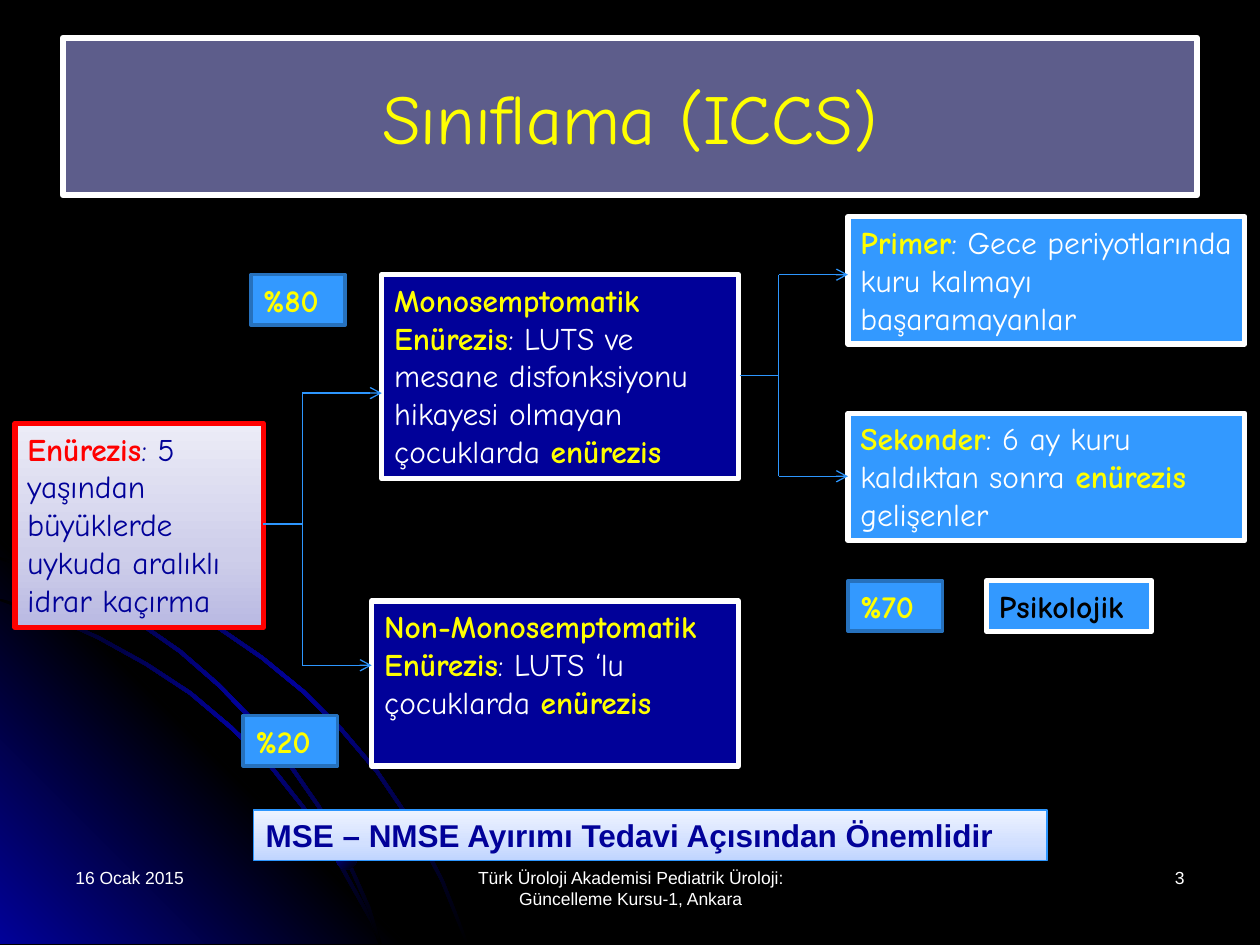
from dataclasses import dataclass

from lxml import etree
from pptx import Presentation
from pptx.dml.color import RGBColor
from pptx.enum.shapes import MSO_CONNECTOR, MSO_SHAPE
from pptx.enum.text import MSO_ANCHOR, MSO_AUTO_SIZE, PP_ALIGN
from pptx.oxml.ns import qn
from pptx.util import Inches, Pt

RECTANGLE, OVAL = MSO_SHAPE.RECTANGLE, MSO_SHAPE.OVAL
STRAIGHT = MSO_CONNECTOR.STRAIGHT
TOP, MIDDLE = MSO_ANCHOR.TOP, MSO_ANCHOR.MIDDLE
LEFT, CENTER, RIGHT = PP_ALIGN.LEFT, PP_ALIGN.CENTER, PP_ALIGN.RIGHT
NO_AUTOFIT = MSO_AUTO_SIZE.NONE

WIDTH, HEIGHT = 10, 7.5


@dataclass(frozen=True)
class Theme:
    black: str = "000000"
    white: str = "FFFFFF"
    yellow: str = "FFFF00"
    red: str = "FF0000"
    navy: str = "010199"
    sky: str = "3399FF"
    sky_edge: str = "2671BD"
    connector: str = "2D96FE"
    title_fill: str = "5D5D8B"
    lavender: tuple = ((0, "B9B9E2"), (35, "CECEEA"), (100, "ECECF7"))
    pale_blue: tuple = ((0, "BFD4FF"), (35, "D2E0FF"), (100, "EEF3FF"))
    streak: tuple = ((0, "000000"), (50, "010199"), (100, "000000"))
    glow: tuple = ((0, "010199"), (50, "000000"), (100, "010199"))
    dot: tuple = ((0, "010199"), (100, "000000"))
    hand_font: str = "Comic Neue"
    plain_font: str = "Arial"
    title_size: int = 40
    body_size: int = 18
    footer_size: int = 10


THEME = Theme()


def write_text(paragraph, text, *, color, size=THEME.body_size, font=THEME.hand_font, bold=False):
    run = paragraph.add_run()
    run.text = text
    run.font.name = font
    run.font.size = Pt(size)
    run.font.bold = bold
    run.font.color.rgb = RGBColor.from_string(color)


def fill_gradient(shape, stops, angle):
    """Fill with (percent, colour) stops; the angle runs clockwise."""
    shape.fill.background()
    old_fill = shape._element.spPr.find(qn("a:noFill"))
    gradient = etree.Element(qn("a:gradFill"), rotWithShape="1")
    stop_list = etree.SubElement(gradient, qn("a:gsLst"))
    for percent, color in stops:
        stop = etree.SubElement(stop_list, qn("a:gs"), pos=str(percent * 1000))
        etree.SubElement(stop, qn("a:srgbClr"), val=color)
    etree.SubElement(gradient, qn("a:lin"), ang=str(angle * 60000), scaled="0")
    old_fill.getparent().replace(old_fill, gradient)


class SlideBuilder:
    def __init__(self, slide, theme):
        self.slide = slide
        self.shapes = slide.shapes
        self.theme = theme
        slide.background.fill.solid()
        slide.background.fill.fore_color.rgb = RGBColor.from_string(theme.black)

    def paint(self, shape, fill, edge=None, edge_width=3, angle=270):
        """Apply a plain colour or a tuple of gradient stops, and an optional edge."""
        if isinstance(fill, tuple):
            fill_gradient(shape, fill, angle)
        else:
            shape.fill.solid()
            shape.fill.fore_color.rgb = RGBColor.from_string(fill)
        if edge:
            shape.line.color.rgb = RGBColor.from_string(edge)
            shape.line.width = Pt(edge_width)
        else:
            shape.line.fill.background()

    def set_frame(self, shape, anchor=TOP, align=LEFT):
        frame = shape.text_frame
        frame.word_wrap = True
        frame.auto_size = NO_AUTOFIT
        frame.vertical_anchor = anchor
        frame.paragraphs[0].alignment = align
        return frame.paragraphs[0]

    def title(self, text, left, top, width, height):
        title = self.shapes.title
        title.left, title.top = Inches(left), Inches(top)
        title.width, title.height = Inches(width), Inches(height)
        self.paint(title, self.theme.title_fill, self.theme.white, 3.5)
        write_text(self.set_frame(title, MIDDLE, CENTER), text,
                   color=self.theme.yellow, size=self.theme.title_size)

    def preset(self, kind, place, fill, **look):
        shape = self.shapes.add_shape(kind, *map(Inches, place))
        shape.shadow.inherit = False
        self.paint(shape, fill, **look)
        return shape

    def outline(self, points, fill, angle):
        (start_x, start_y), *others = [(Inches(x), Inches(y)) for x, y in points]
        builder = self.shapes.build_freeform(start_x, start_y)
        builder.add_line_segments(others)
        shape = builder.convert_to_shape()
        shape.shadow.inherit = False
        self.paint(shape, fill, angle=angle)

    def streak(self, points, thickness=0.02):
        """Draw a thin curved band below the given edge, kept on the slide."""
        inner = [(max(0, x - thickness), min(HEIGHT, y + thickness)) for x, y in reversed(points)]
        self.outline(points + inner, self.theme.streak, 45)

    def box(self, place, runs, fill, edge=THEME.white, edge_width=3, font=THEME.hand_font):
        """Draw a box; runs are (text, colour, bold)."""
        shape = self.preset(RECTANGLE, place, fill, edge=edge, edge_width=edge_width)
        paragraph = self.set_frame(shape)
        for text, color, bold in runs:
            write_text(paragraph, text, color=color, bold=bold, font=font)

    def percentage(self, left, top, text):
        self.box((left, top, 0.75, 0.4), [(text, self.theme.yellow, True)],
                 self.theme.sky, self.theme.sky_edge, 2)

    def line(self, start, end, arrow=False):
        connector = self.shapes.add_connector(STRAIGHT, *map(Inches, start + end))
        connector.line.color.rgb = RGBColor.from_string(self.theme.connector)
        connector.line.width = Pt(0.75)
        if arrow:
            etree.SubElement(connector.line._get_or_add_ln(), qn("a:tailEnd"), type="arrow")
        etree.SubElement(connector._element.spPr, qn("a:effectLst"))

    def branch(self, start, trunk_x, ends):
        """Link a start point to several ends through a vertical trunk."""
        heights = [y for _, y in ends]
        self.line(start, (trunk_x, start[1]))
        self.line((trunk_x, min(heights)), (trunk_x, max(heights)))
        for end in ends:
            self.line((trunk_x, end[1]), end, arrow=True)

    def footer(self, text, left, width, align):
        place = map(Inches, (left, 6.83, width, 0.5))
        paragraph = self.set_frame(self.shapes.add_textbox(*place), align=align)
        write_text(paragraph, text, color=self.theme.white,
                   size=self.theme.footer_size, font=self.theme.plain_font)


def draw_backdrop(builder):
    theme = builder.theme
    builder.streak([(0, 4.35), (0.57, 4.47), (0.98, 4.59), (1.36, 4.77), (1.74, 4.97),
                    (2.09, 5.21), (2.42, 5.48), (2.72, 5.78), (3, 6.11), (3.25, 6.48),
                    (3.39, 6.73), (3.52, 6.98), (3.62, 7.23), (3.72, 7.49)])
    builder.outline([(0, 4.27), (3.22, 7.49), (0, 7.49)], theme.glow, 315)
    builder.streak([(0, 4.75), (0.41, 4.88), (0.79, 5.05), (1.17, 5.26), (1.52, 5.49),
                    (1.84, 5.76), (2.15, 6.06), (2.42, 6.4), (2.66, 6.76), (2.86, 7.12),
                    (2.96, 7.3), (3.03, 7.49)])
    builder.streak([(0, 4.42), (0.39, 4.55), (0.76, 4.73), (1.11, 4.93), (1.44, 5.16),
                    (1.75, 5.43), (2.04, 5.73), (2.29, 6.03), (2.54, 6.39), (2.69, 6.65),
                    (2.82, 6.93), (2.94, 7.2), (3.03, 7.49)])
    for left, top, size, angle in [(0.36, 4.83, 0.15, 315), (2.67, 6.74, 0.16, 45),
                                   (1.37, 4.73, 0.21, 315)]:
        builder.preset(OVAL, (left, top, size, size), theme.dot, angle=angle)


def draw_classification(builder):
    theme = builder.theme
    navy, sky, white, yellow = theme.navy, theme.sky, theme.white, theme.yellow
    enuresis = ("enürezis", yellow, True)
    builder.box((0.12, 3.36, 1.97, 1.62),
                [("Enürezis", theme.red, True),
                 (": 5 yaşından büyüklerde uykuda aralıklı idrar kaçırma", navy, False)],
                theme.lavender, theme.red)
    builder.box((3.03, 2.18, 2.83, 1.62),
                [("Monosemptomatik Enürezis", yellow, True),
                 (": LUTS ve mesane disfonksiyonu hikayesi olmayan çocuklarda ", white, False),
                 enuresis], navy)
    builder.box((2.95, 4.77, 2.91, 1.31),
                [("Non-Monosemptomatik Enürezis", yellow, True),
                 (": LUTS ‘lu çocuklarda ", white, False), enuresis], navy)
    builder.box((6.73, 1.72, 3.15, 1.01),
                [("Primer", yellow, True),
                 (": Gece periyotlarında kuru kalmayı başaramayanlar", white, False)], sky)
    builder.box((6.73, 3.28, 3.15, 1.01),
                [("Sekonder", yellow, True), (": 6 ay kuru kaldıktan sonra ", white, False),
                 enuresis, (" gelişenler", white, False)], sky)
    builder.branch((5.87, 2.98), 6.18, [(6.73, 2.18), (6.73, 3.78)])
    builder.branch((2.09, 4.16), 2.4, [(3.03, 3.12), (2.95, 5.28)])
    builder.box((2.01, 6.43, 6.3, 0.4),
                [("MSE – NMSE Ayırımı Tedavi Açısından Önemlidir", navy, True)],
                theme.pale_blue, theme.connector, 0.75, theme.plain_font)
    for left, top, text in [(1.99, 2.18, "%80"), (1.93, 5.68, "%20"), (6.73, 4.61, "%70")]:
        builder.percentage(left, top, text)
    builder.box((7.83, 4.61, 1.31, 0.4), [("Psikolojik", theme.black, True)], sky)


def main():
    presentation = Presentation()
    presentation.slide_width, presentation.slide_height = Inches(WIDTH), Inches(HEIGHT)
    title_only = presentation.slide_layouts[5]
    builder = SlideBuilder(presentation.slides.add_slide(title_only), THEME)
    draw_backdrop(builder)
    builder.title("Sınıflama (ICCS)", 0.5, 0.3, 9, 1.25)
    draw_classification(builder)
    builder.footer("16 Ocak 2015", 0.5, 2.33, LEFT)
    builder.footer("3", 7.17, 2.33, RIGHT)
    builder.footer("Türk Üroloji Akademisi Pediatrik Üroloji: Güncelleme Kursu-1, Ankara",
                   3.42, 3.17, CENTER)
    presentation.save("out.pptx")


if __name__ == "__main__":
    main()
